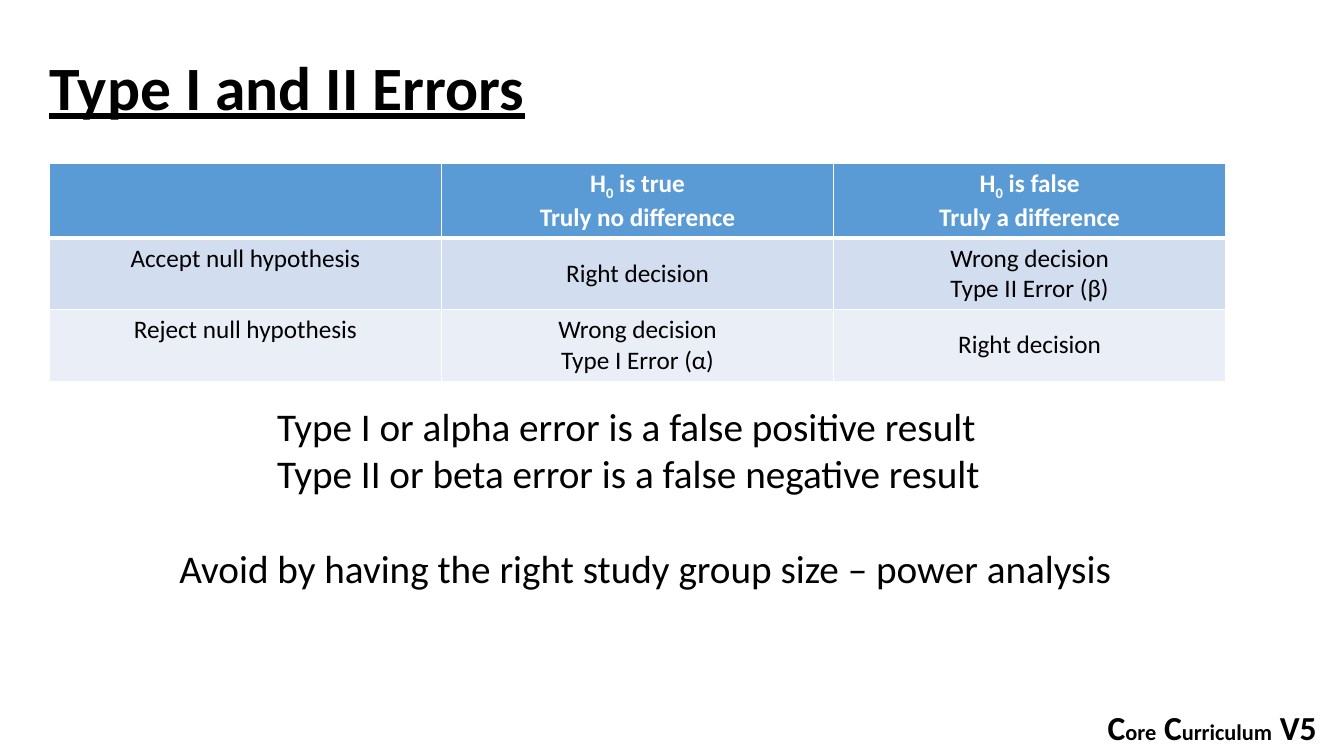
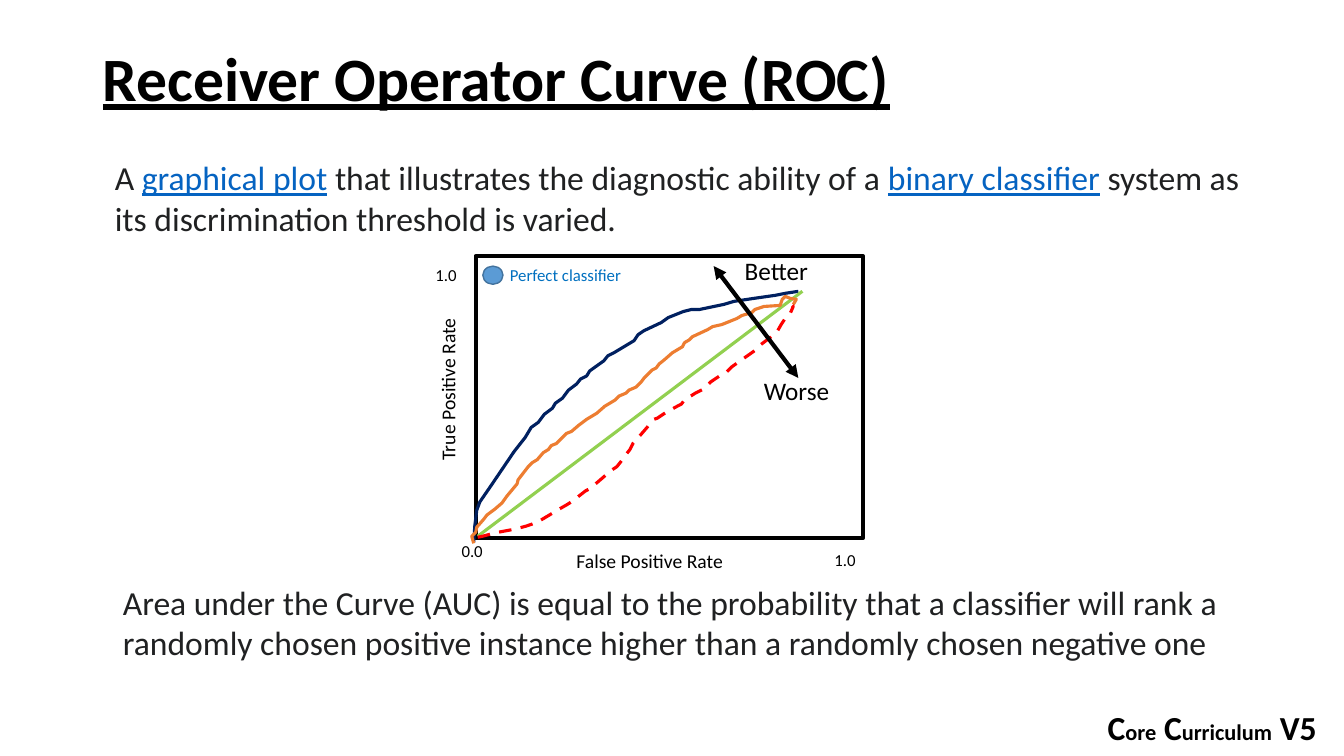
from pptx import Presentation
from pptx.dml.color import RGBColor
from pptx.enum.dml import MSO_LINE
from pptx.enum.shapes import MSO_CONNECTOR, MSO_SHAPE
from pptx.enum.text import MSO_ANCHOR, MSO_AUTO_SIZE, PP_ALIGN
from pptx.oxml.ns import qn
from pptx.util import Inches, Pt
from lxml.etree import SubElement

FONT = "Calibri"
GRID = Inches(0.1)
FINE = GRID / 10
COLS, ROWS = 133.33, 75

BLACK = RGBColor(0x00, 0x00, 0x00)
WHITE = RGBColor(0xFF, 0xFF, 0xFF)
INK = RGBColor(0x20, 0x21, 0x22)
LINK = RGBColor(0x05, 0x63, 0xC1)
BLUE = RGBColor(0x5B, 0x9B, 0xD5)
BLUE_EDGE = RGBColor(0x43, 0x73, 0x9E)
BAND_DARK = RGBColor(0xD2, 0xDE, 0xEF)
BAND_LIGHT = RGBColor(0xEA, 0xEF, 0xF7)
SKY = RGBColor(0x00, 0x70, 0xC0)
NAVY = RGBColor(0x00, 0x20, 0x60)
GREEN = RGBColor(0x92, 0xD0, 0x50)
ORANGE = RGBColor(0xED, 0x7D, 0x31)
RED = RGBColor(0xFF, 0x00, 0x00)

SMALL = {"size": 16}
LINKED = {"color": LINK, "underline": True}
SUB = {"baseline": -25000}

FOOTER = ["C", ("ore", SMALL), " C", ("urriculum", SMALL), " V5"]

ERROR_ROWS = [
    ([], [["H", ("0", SUB), " is true"], "Truly no difference"],
     [["H", ("0", SUB), " is false"], "Truly a difference"]),
    (["Accept null hypothesis"], ["Right decision"],
     ["Wrong decision", "Type II Error (β)"]),
    (["Reject null hypothesis"], ["Wrong decision", "Type I Error (α)"],
     ["Right decision"]),
]

STRONG_CURVE = [
    (470, 538), (471, 522), (473, 506), (476, 498), (487, 482), (510, 448),
    (521, 434), (527, 424), (534, 419), (540, 411), (548, 405), (551, 400),
    (558, 395), (564, 387), (572, 381), (576, 376), (582, 373), (585, 368),
    (599, 358), (603, 353), (609, 350), (629, 338), (633, 332), (639, 328),
    (656, 320), (663, 315), (678, 309), (686, 307), (694, 307), (718, 302),
    (728, 299), (748, 296), (769, 293), (779, 291), (792, 289),
]
FAIR_CURVE = [
    (470, 539), (468, 532), (472, 528), (473, 523), (480, 515), (483, 511),
    (491, 505), (498, 499), (503, 492), (513, 480), (514, 476), (524, 463),
    (528, 459), (533, 456), (539, 449), (544, 446), (547, 442), (552, 440),
    (559, 433), (562, 430), (567, 428), (574, 422), (578, 419), (582, 416),
    (592, 410), (600, 403), (610, 397), (614, 393), (621, 390), (624, 387),
    (631, 384), (636, 379), (639, 375), (647, 367), (651, 365), (654, 361),
    (659, 357), (667, 350), (672, 347), (677, 344), (679, 340), (684, 337),
    (687, 334), (702, 327), (707, 324), (716, 322), (721, 320), (731, 316),
    (736, 313), (746, 310), (749, 307), (758, 304), (774, 303), (776, 297),
    (779, 294), (784, 296), (790, 297), (787, 302),
]
POOR_CURVE = [
    (474, 533), (479, 532), (490, 529), (500, 527), (511, 525), (522, 522),
    (528, 520), (535, 517), (545, 511), (550, 508), (555, 505), (562, 501),
    (570, 496), (572, 494), (581, 487), (585, 485), (591, 480), (598, 474),
    (606, 467), (612, 463), (616, 458), (621, 451), (625, 446), (628, 440),
    (636, 431), (642, 424), (649, 416), (652, 415), (661, 409), (672, 403),
    (676, 401), (679, 397), (690, 390), (698, 386), (705, 379), (711, 375),
    (717, 371), (721, 369), (726, 364), (733, 359), (743, 352), (750, 347),
    (752, 344), (764, 335), (771, 329), (775, 322), (779, 316), (784, 311),
    (787, 304), (786, 303),
]

AXIS_LABELS = [
    ("False Positive Rate", (56.2, 54, 16.7, 3.4), 14, BLACK, 0),
    ("True Positive Rate", (36.3, 36.8, 16.3, 3.4), 14, BLACK, 270),
    ("Perfect classifier", (49.6, 25.8, 13.2, 3), 12, SKY, 0),
    ("1.0", (42.2, 25.8, 5.2, 3), 12, BLACK, 0),
    ("1.0", (81.8, 54, 5.2, 3), 12, BLACK, 0),
    ("0.0", (44.8, 53.2, 5.2, 3), 12, BLACK, 0),
    ("Worse", (74.8, 36.7, 8.6, 4), 18, BLACK, 0),
    ("Better", (72.9, 24.8, 8.4, 4), 18, BLACK, 0),
]


def cells(*counts):
    """Turn grid counts into lengths."""
    return [round(n * GRID) for n in counts]


def add_run(p, text, size, color, bold=False, underline=False, baseline=None):
    """Append one formatted run."""
    r = p.add_run()
    r.text = text
    font = r.font
    font.name, font.size, font.bold = FONT, Pt(size), bold
    font.underline = underline
    font.color.rgb = color
    if baseline:
        r._r.get_or_add_rPr().set("baseline", str(baseline))


def write(tf, *paras, align=PP_ALIGN.LEFT, **fmt):
    """Write paragraphs, each a string or a list of runs."""
    fmt = {"size": 18, "color": BLACK, **fmt}
    for i, para in enumerate(paras):
        p = tf.add_paragraph() if i else tf.paragraphs[0]
        p.alignment = align
        for run in [para] if isinstance(para, str) else para:
            text, extra = (run, {}) if isinstance(run, str) else run
            add_run(p, text, **{**fmt, **extra})


def add_text(s, box, *paras, wrap=True, rotation=0, **fmt):
    """Add a text box."""
    sp = s.shapes.add_textbox(*cells(*box))
    sp.rotation = rotation
    sp.text_frame.word_wrap = wrap
    write(sp.text_frame, *paras, **fmt)
    return sp.text_frame


def new_slide(prs, title, left, top):
    """Start a slide with its title and the shared footer."""
    s = prs.slides.add_slide(prs.slide_layouts[5])
    sp = s.shapes.title
    sp.left, sp.top, sp.width, sp.height = cells(left, top, 115, 14.5)
    tf = sp.text_frame
    tf.auto_size, tf.vertical_anchor = MSO_AUTO_SIZE.NONE, MSO_ANCHOR.MIDDLE
    write(tf, title, size=44, bold=True, underline=True)
    tf.paragraphs[0].line_spacing = 0.9
    add_text(s, (108.9, 69.6, 23.5, 5), FOOTER, size=24, bold=True)
    return s


def set_borders(cell, bottom):
    """Give a cell white borders."""
    tc_pr = cell._tc.get_or_add_tcPr()
    widths = {"lnL": 1, "lnR": 1, "lnT": 1, "lnB": bottom}
    for i, (side, width) in enumerate(widths.items()):
        ln = SubElement(tc_pr, qn(f"a:{side}"), w=str(Pt(width)))
        tc_pr.insert(i, ln)
        fill = SubElement(ln, qn("a:solidFill"))
        SubElement(fill, qn("a:srgbClr"), val=str(WHITE))


def add_error_table(s):
    """Add the table of decisions and errors."""
    table = s.shapes.add_table(3, 3, *cells(4.9, 16.2, 116.7, 21.6)).table
    for col in table.columns:
        col.width = cells(38.9)[0]
    looks = [(7.4, BLUE, WHITE, 3), (7.1, BAND_DARK, BLACK, 1),
             (7.1, BAND_LIGHT, BLACK, 1)]
    for i, (height, fill, color, bottom) in enumerate(looks):
        table.rows[i].height = cells(height)[0]
        for j, paras in enumerate(ERROR_ROWS[i]):
            cell = table.cell(i, j)
            cell.fill.solid()
            cell.fill.fore_color.rgb = fill
            cell.vertical_anchor = MSO_ANCHOR.MIDDLE if j else MSO_ANCHOR.TOP
            set_borders(cell, bottom)
            write(cell.text_frame, *paras, align=PP_ALIGN.CENTER,
                  color=color, bold=i == 0)


def style_line(sp, color, width, dash=None):
    """Format an outline."""
    sp.line.color.rgb, sp.line.width = color, Pt(width)
    if dash:
        sp.line.dash_style = dash


def add_preset(s, kind, box, color, width, fill=None):
    """Add an outlined preset shape."""
    sp = s.shapes.add_shape(kind, *cells(*box))
    sp.shadow.inherit = False
    if fill:
        sp.fill.solid()
        sp.fill.fore_color.rgb = fill
    else:
        sp.fill.background()
    style_line(sp, color, width)


def add_curve(s, points, color, dash=None):
    """Add an open curve through the points."""
    builder = s.shapes.build_freeform(*points[0], scale=FINE)
    builder.add_line_segments(points[1:], close=False)
    sp = builder.convert_to_shape()
    sp.shadow.inherit = False
    sp.fill.background()
    style_line(sp, color, 2.25, dash)


def add_line(s, ends, color, width, arrows=False):
    """Add a straight line, with arrowheads if asked."""
    cx = s.shapes.add_connector(MSO_CONNECTOR.STRAIGHT, *cells(*ends))
    style_line(cx, color, width)
    if arrows:
        for end in ("a:headEnd", "a:tailEnd"):
            SubElement(cx.line._get_or_add_ln(), qn(end), type="triangle")
    SubElement(cx._element.spPr, qn("a:effectLst"))


def build_errors(prs):
    """Build the slide on error types."""
    s = new_slide(prs, "Type I and II Errors", 3.9, 1.7)
    add_error_table(s)
    tf = add_text(s, (16.8, 39.4, 95.5, 19.9),
                  "Type I or alpha error is a false positive result",
                  "Type II or beta error is a false negative result",
                  "Avoid by having the right study group size – power analysis",
                  size=28)
    for p in tf.paragraphs[:2]:
        p._p.get_or_add_pPr().set("marL", str(cells(9.7)[0]))
    tf.paragraphs[2].space_before = Pt(34)


def build_roc(prs):
    """Build the slide on the ROC curve."""
    s = new_slide(prs, "Receiver Operator Curve (ROC)", 9.2, 0.8)
    add_text(s, (10.4, 15.1, 115.5, 9.1),
             ["A ", ("graphical plot", LINKED),
              " that illustrates the diagnostic ability of a ",
              ("binary classifier", LINKED),
              " system as its discrimination threshold is varied."],
             size=24, color=INK)
    add_text(s, (11.2, 57.2, 113.8, 9.1),
             "Area under the Curve (AUC) is equal to the probability that a "
             "classifier will rank a randomly chosen positive instance higher "
             "than a randomly chosen negative one", size=24, color=INK)
    add_preset(s, MSO_SHAPE.RECTANGLE, (47.2, 25.4, 38.4, 28), BLACK, 3)
    add_preset(s, MSO_SHAPE.OVAL, (47.9, 26.4, 2, 1.8), BLUE_EDGE, 1, BLUE)
    add_curve(s, STRONG_CURVE, NAVY)
    add_line(s, (47.4, 53.2, 79.6, 28.9), GREEN, 2.25)
    add_curve(s, FAIR_CURVE, ORANGE)
    add_curve(s, POOR_CURVE, RED, MSO_LINE.DASH)
    add_line(s, (70.8, 26.4, 79.2, 37.5), BLACK, 3, arrows=True)
    for text, box, size, color, rotation in AXIS_LABELS:
        add_text(s, box, text, wrap=False, rotation=rotation,
                 size=size, color=color)


def main():
    """Build and save the presentation."""
    prs = Presentation()
    prs.slide_width, prs.slide_height = cells(COLS, ROWS)
    build_errors(prs)
    build_roc(prs)
    prs.save("out.pptx")


if __name__ == "__main__":
    main()
